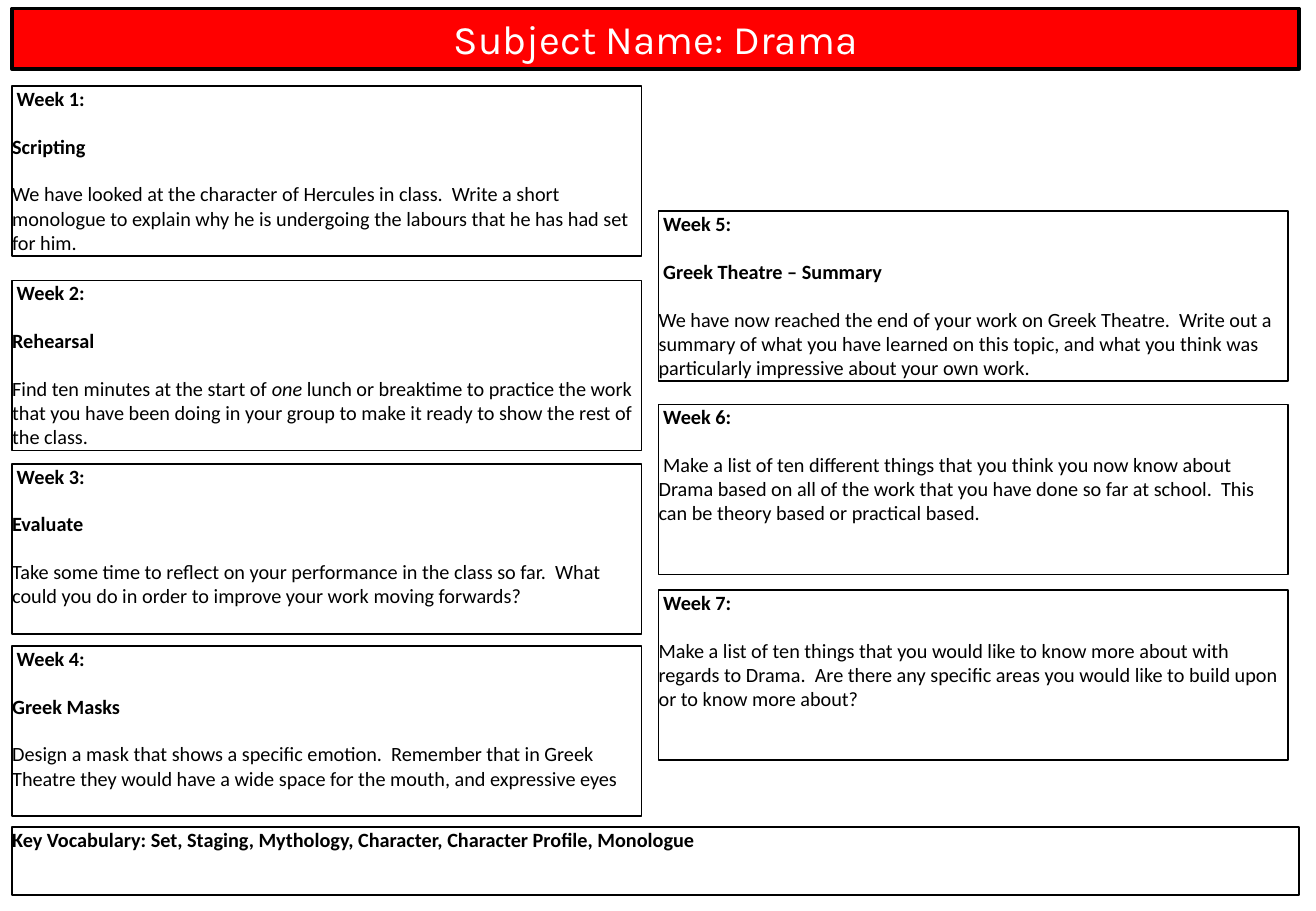
from pptx import Presentation
from pptx.dml.color import RGBColor
from pptx.enum.shapes import MSO_SHAPE
from pptx.enum.text import MSO_ANCHOR, PP_ALIGN
from pptx.util import Inches, Pt

THEME = {
    "ink": RGBColor(0, 0, 0),
    "banner": RGBColor(255, 0, 0),
    "banner_text": RGBColor(255, 255, 255),
    "title": {"name": "Karla", "size": Pt(24)},
    "body": {"name": "Calibri", "size": Pt(12)},
    "gap": Pt(13.9),
}
MARGIN, COLUMN_WIDTH, GUTTER = 0.1, 5.18, 0.14
FULL_WIDTH, CARD_HEIGHT = 10.59, 1.4
BOLD, PLAIN, ITALIC = {"bold": True}, {"bold": False}, {"bold": False, "italic": True}

# Column, top edge, paragraphs after the week label; each paragraph is a list of (text, format)
WEEKS = [
    (0, 0.71, [
        [("Scripting", BOLD)],
        [("We have looked at the character of Hercules in class.  Write a short monologue "
          "to explain why he is undergoing the labours that he has had set for him.", PLAIN)]]),
    (0, 2.31, [
        [("Rehearsal", BOLD)],
        [("Find ten minutes at the start of ", PLAIN), ("one", ITALIC),
         (" lunch or breaktime to practice the work that you have been doing in your group "
          "to make it ready to show the rest of the class.", PLAIN)]]),
    (0, 3.82, [
        [("Evaluate", BOLD)],
        [("Take some time to reflect on your performance in the class so far.  What could "
          "you do in order to improve your work moving forwards?", PLAIN)]]),
    (0, 5.32, [
        [("Greek Masks", BOLD)],
        [("Design a mask that shows a specific emotion.  Remember that in Greek Theatre "
          "they would have a wide space for the mouth, and expressive eyes", PLAIN)]]),
    (1, 1.74, [
        [(" Greek Theatre – Summary", BOLD)],
        [("We have now reached the end of your work on Greek Theatre.  Write out a summary "
          "of what you have learned on this topic, and what you think was particularly "
          "impressive about your own work.", PLAIN)]]),
    (1, 3.33, [
        [(" Make a list of ten different things that you think you now know about Drama "
          "based on all of the work that you have done so far at school.  This can be "
          "theory based or practical based.", PLAIN)]]),
    (1, 4.86, [
        [("Make a list of ten things that you would like to know more about with regards "
          "to Drama.  Are there any specific areas you would like to build upon or to know "
          "more about?", PLAIN)]]),
]

deck = Presentation()
deck.slide_width, deck.slide_height = Inches(10.83), Inches(7.5)
page = deck.slides.add_slide(deck.slide_layouts[6])


def add_box(left, top, width, height, line_width):
    """Add an unfilled black-edged rectangle with top-anchored, wrapping text."""
    box = page.shapes.add_shape(
        MSO_SHAPE.RECTANGLE, *(Inches(length) for length in (left, top, width, height)))
    box.shadow.inherit = False
    box.fill.background()
    box.line.color.rgb = THEME["ink"]
    box.line.width = Pt(line_width)
    box.text_frame.word_wrap = True
    box.text_frame.vertical_anchor = MSO_ANCHOR.TOP
    return box


def write(box, paragraphs, style, color, alignment):
    frame = box.text_frame
    for index, spans in enumerate(paragraphs):
        para = frame.add_paragraph() if index else frame.paragraphs[0]
        para.alignment = alignment
        if index:
            para.space_before = THEME["gap"]
        for text, emphasis in spans:
            span = para.add_run()
            span.text = text
            span.font.color.rgb = color
            for name, value in {**style, **emphasis}.items():
                setattr(span.font, name, value)


banner = add_box(MARGIN, 0.07, FULL_WIDTH, 0.5, 2.25)
banner.fill.solid()
banner.fill.fore_color.rgb = THEME["banner"]
write(banner, [[("Subject Name: Drama", PLAIN)]],
      THEME["title"], THEME["banner_text"], PP_ALIGN.CENTER)

cards = []
for number, (column, top, paragraphs) in enumerate(WEEKS, start=1):
    left = MARGIN + column * (COLUMN_WIDTH + GUTTER)
    card = add_box(left, top, COLUMN_WIDTH, CARD_HEIGHT, 1)
    cards.append((card, [[(f" Week {number}:", BOLD)], *paragraphs]))

vocabulary = add_box(MARGIN, 6.81, FULL_WIDTH, 0.56, 1)
cards.append((vocabulary, [[("Key Vocabulary: Set, Staging, Mythology, Character, "
                             "Character Profile, Monologue", BOLD)]]))

for card, paragraphs in cards:
    for side in ("left", "top", "right", "bottom"):
        setattr(card.text_frame, f"margin_{side}", 0)
    write(card, paragraphs, THEME["body"], THEME["ink"], PP_ALIGN.LEFT)

deck.save("out.pptx")
